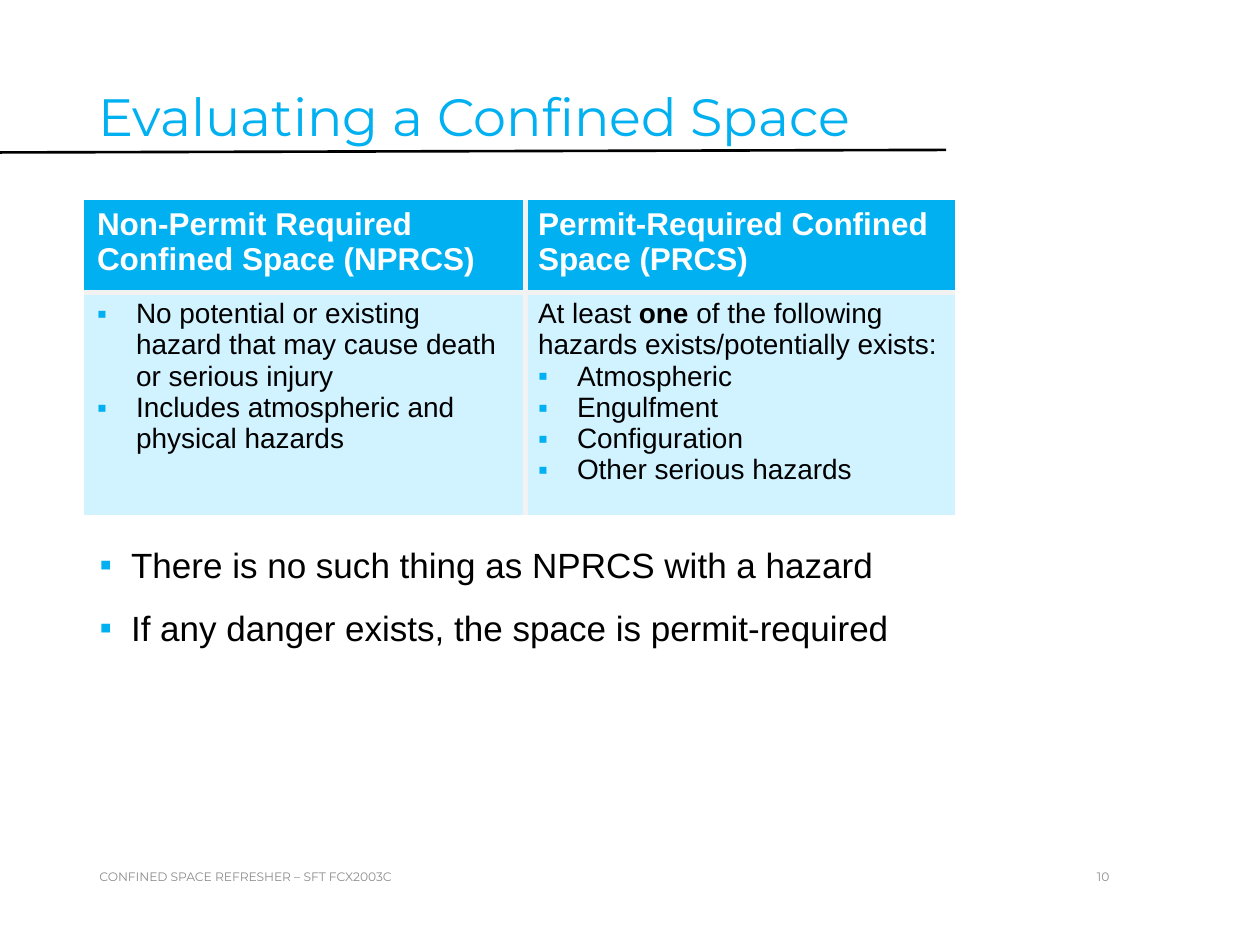
from lxml import etree
from pptx import Presentation
from pptx.dml.color import RGBColor
from pptx.enum.shapes import MSO_CONNECTOR
from pptx.enum.text import MSO_ANCHOR, MSO_AUTO_SIZE, PP_ALIGN
from pptx.oxml.ns import qn
from pptx.util import Inches, Pt

LINE = MSO_CONNECTOR.STRAIGHT
TOP, MIDDLE = MSO_ANCHOR.TOP, MSO_ANCHOR.MIDDLE
FIXED = MSO_AUTO_SIZE.NONE
LEFT, CENTER = PP_ALIGN.LEFT, PP_ALIGN.CENTER
BLUE, PALE, GRID = "00B0F0", "D1F3FF", "F2F2F2"
BLACK, WHITE, GREY = "000000", "FFFFFF", "8C8C8C"
HEAD, BODY = "Montserrat", "Arial"
COLS, ROWS = 100, 75


def color(text):
    return RGBColor.from_string(text)


def add(node, tag, **attrs):
    return etree.SubElement(node, qn(tag), attrs)


class Deck:
    """Hold the style and the slide; lengths are columns and rows of a 100 by 75 grid."""

    def __init__(self):
        self.prs = Presentation()
        self.prs.slide_width, self.prs.slide_height = Inches(10), Inches(7.5)
        self.slide = self.prs.slides.add_slide(self.prs.slide_layouts[1])
        self.shapes = self.slide.shapes

    def x(self, cols):
        return round(self.prs.slide_width * cols / COLS)

    def y(self, rows):
        return round(self.prs.slide_height * rows / ROWS)

    def area(self, left, top, width, height):
        return self.x(left), self.y(top), self.x(width), self.y(height)

    def place(self, shape, box, anchor=TOP):
        shape.left, shape.top, shape.width, shape.height = self.area(*box)
        frame = shape.text_frame
        frame.word_wrap, frame.auto_size = True, FIXED
        frame.vertical_anchor = anchor
        return frame

    def style(self, para, size, tone, face=BODY, bold=False, align=LEFT):
        para.alignment = align
        font = para.font
        font.name, font.size, font.bold = face, Pt(size), bold
        font.color.rgb = color(tone)

    def bullet(self, para, indent):
        props = para._p.get_or_add_pPr()
        step = Inches(indent)
        props.set("marL", str(step))
        props.set("indent", str(-step))
        add(add(props, "a:buClr"), "a:srgbClr", val=BLUE)
        add(props, "a:buFont", typeface=BODY)
        add(props, "a:buChar", char="▪")

    def title(self, text, box):
        para = self.place(self.shapes.title, box).paragraphs[0]
        para.text, para.line_spacing = text, 0.9
        self.style(para, 30, BLUE, HEAD)

    def points(self, items, box):
        frame = self.place(self.slide.placeholders[1], box)
        frame.text = "\n".join(items)
        for i, para in enumerate(frame.paragraphs):
            self.bullet(para, 0.25)
            para.space_before, para.space_after = Pt(6 if i else 0), Pt(6)
            self.style(para, 20, BLACK)

    def note(self, text, box, align=LEFT):
        shape = self.shapes.add_textbox(*self.area(*box))
        para = self.place(shape, box, MIDDLE).paragraphs[0]
        para.text = text
        self.style(para, 7, GREY, HEAD, align=align)

    def rule(self, x1, y1, x2, y2):
        line = self.shapes.add_connector(
            LINE, self.x(x1), self.y(y1), self.x(x2), self.y(y2))
        line.line.color.rgb, line.line.width = color(BLACK), Pt(1.5)
        add(line._element.spPr, "a:effectLst")

    def border(self, cell, inner):
        props = cell._tc.get_or_add_tcPr()
        for i, side in enumerate("LRTB"):
            line = etree.Element(qn("a:ln" + side), w=str(Pt(3)))
            if side in inner:
                add(add(line, "a:solidFill"), "a:srgbClr", val=GRID)
            else:
                add(line, "a:noFill")
            props.insert(i, line)

    def cell(self, cell, lines, fill, size, tone, bold):
        cell.fill.solid()
        cell.fill.fore_color.rgb = color(fill)
        frame = cell.text_frame
        for i, (text, dot) in enumerate(lines):
            para = frame.add_paragraph() if i else frame.paragraphs[0]
            if dot:
                self.bullet(para, 0.31)
            self.style(para, size, tone, bold=bold)
            for j, part in enumerate(text.split("*")):
                run = para.add_run()
                run.text, run.font.bold = part, bold or j % 2 == 1

    def table(self, data, left, top, widths, heights):
        box = self.area(left, top, sum(widths), sum(heights))
        table = self.shapes.add_table(len(heights), len(widths), *box).table
        for col, width in zip(table.columns, widths):
            col.width = self.x(width)
        looks = (BLUE, 18, WHITE, True), (PALE, 16, BLACK, False)
        for r, (row, look) in enumerate(zip(data, looks)):
            table.rows[r].height = self.y(heights[r])
            for c, lines in enumerate(row):
                cell = table.cell(r, c)
                self.cell(cell, lines, *look)
                self.border(cell, "RL"[c] + "BT"[r])


def main():
    deck = Deck()
    deck.rule(0, 12.1, 75.1, 11.9)
    deck.title("Evaluating a Confined Space", (6.8, 6.7, 68.2, 7.1))
    deck.points(["There is no such thing as NPRCS with a hazard",
                 "If any danger exists, the space is permit-required"],
                (6.9, 42.6, 68.2, 23.8))
    deck.table([
        [[("Non-Permit Required Confined Space (NPRCS)", False)],
         [("Permit-Required Confined Space (PRCS)", False)]],
        [[("No potential or existing hazard that may cause death "
           "or serious injury", True),
          ("Includes atmospheric and physical hazards", True)],
         [("At least *one* of the following hazards exists/potentially exists:",
           False),
          ("Atmospheric", True), ("Engulfment", True),
          ("Configuration", True), ("Other serious hazards", True)]],
    ], 6.7, 15.9, (35, 34.1), (7.3, 17.7))
    deck.note("CONFINED SPACE REFRESHER – SFT FCX2003C", (6.9, 67.6, 60, 4))
    deck.note("10", (75.1, 67.6, 24.9, 4), CENTER)
    deck.prs.save("out.pptx")


if __name__ == "__main__":
    main()
